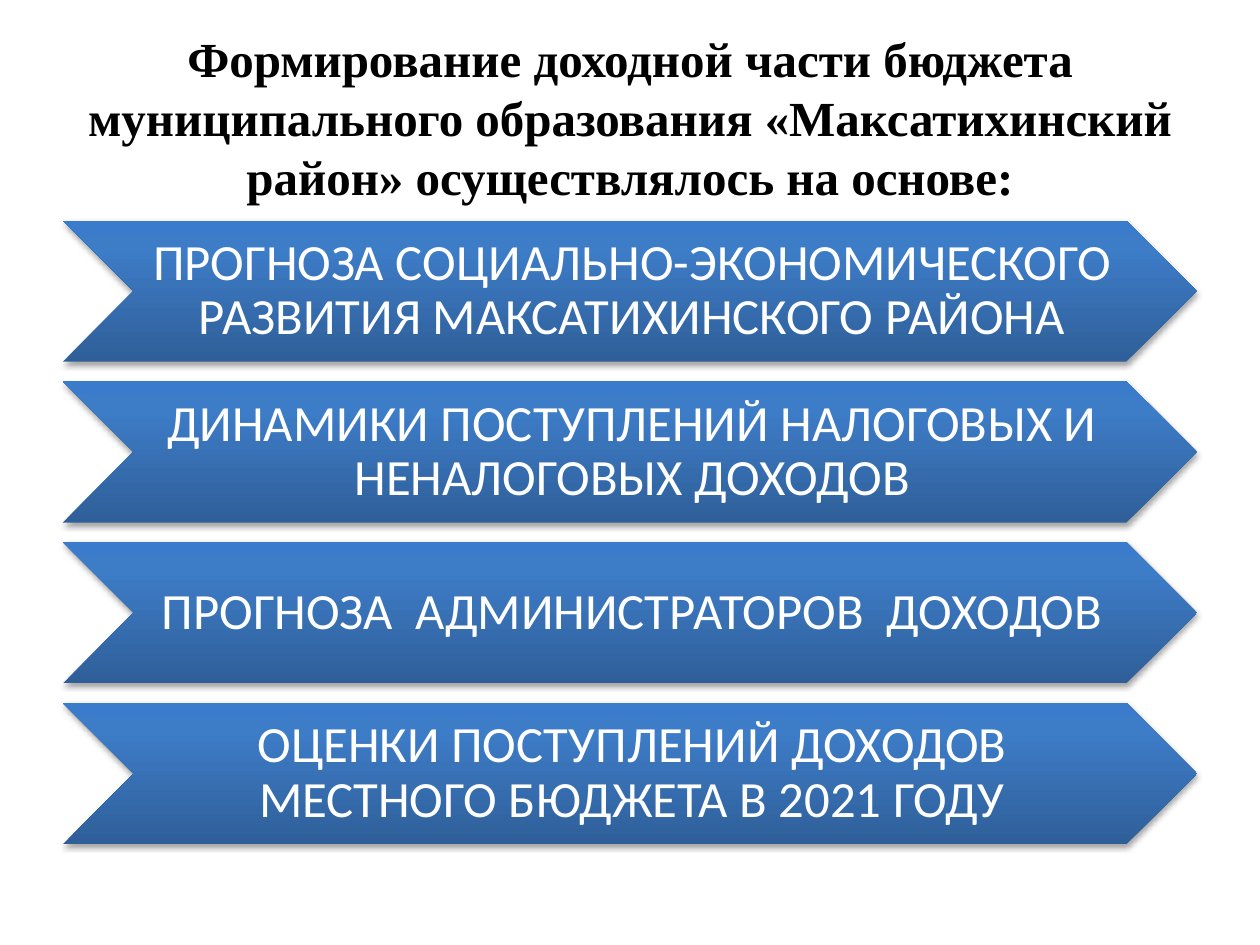
from dataclasses import dataclass

from lxml import etree
from pptx import Presentation
from pptx.dml.color import RGBColor
from pptx.enum.shapes import MSO_SHAPE
from pptx.enum.text import MSO_ANCHOR, PP_ALIGN
from pptx.oxml.ns import qn
from pptx.slide import Slide
from pptx.util import Inches, Pt

CHEVRON = MSO_SHAPE.CHEVRON
MIDDLE = MSO_ANCHOR.MIDDLE
CENTER = PP_ALIGN.CENTER

HEADING = (
    "Формирование доходной части бюджета муниципального образования "
    "«Максатихинский район» осуществлялось на основе:"
)
FOUNDATIONS = [
    "ПРОГНОЗА СОЦИАЛЬНО-ЭКОНОМИЧЕСКОГО РАЗВИТИЯ МАКСАТИХИНСКОГО РАЙОНА",
    "ДИНАМИКИ ПОСТУПЛЕНИЙ НАЛОГОВЫХ И НЕНАЛОГОВЫХ ДОХОДОВ",
    "ПРОГНОЗА  АДМИНИСТРАТОРОВ  ДОХОДОВ",
    "ОЦЕНКИ ПОСТУПЛЕНИЙ ДОХОДОВ МЕСТНОГО БЮДЖЕТА В 2021 ГОДУ",
]
LEFT, WIDTH = 0.5, 9
FIRST_TOP, LAST_TOP, BAND_HEIGHT = 1.75, 5.58, 1.12
NOTCH = BAND_HEIGHT / 2


def color(hex_code):
    return RGBColor.from_string(hex_code)


def write(frame, text, font, size, ink, bold=False, spacing=1.0):
    paragraph = frame.paragraphs[0]
    paragraph.alignment = CENTER
    paragraph.line_spacing = spacing
    run = paragraph.add_run()
    run.text = text
    run.font.name = font
    run.font.size = Pt(size)
    run.font.bold = bold
    run.font.color.rgb = color(ink)


def add_color(parent, hex_code):
    return etree.SubElement(parent, qn("a:srgbClr"), val=hex_code)


@dataclass
class BudgetSlide:
    slide: Slide
    heading_font: str = "Times New Roman"
    body_font: str = "Calibri"
    heading_ink: str = "000000"
    body_ink: str = "FFFFFF"
    shadow_ink: str = "000000"
    gradient: tuple = ((0, "2F5F99"), (80, "3D7CC7"), (100, "3A7CCB"))

    def text_frame(self, left, top, width, height):
        label = self.slide.shapes.add_textbox(
            Inches(left), Inches(top), Inches(width), Inches(height)
        )
        frame = label.text_frame
        frame.word_wrap = True
        frame.vertical_anchor = MIDDLE
        return frame

    def heading(self, text):
        frame = self.text_frame(LEFT, 0.3, WIDTH, 1.25)
        write(frame, text, self.heading_font, 28, self.heading_ink, bold=True)

    def chevron(self, top):
        band = self.slide.shapes.add_shape(
            CHEVRON, Inches(LEFT), Inches(top), Inches(WIDTH), Inches(BAND_HEIGHT)
        )
        band.line.fill.background()
        band.shadow.inherit = False
        properties = band.element.spPr
        self.shade(properties)
        self.cast_shadow(properties)

    def shade(self, properties):
        shading = etree.Element(qn("a:gradFill"), rotWithShape="1")
        stops = etree.SubElement(shading, qn("a:gsLst"))
        for percent, hex_code in self.gradient:
            stop = etree.SubElement(stops, qn("a:gs"), pos=str(percent * 1000))
            add_color(stop, hex_code)
        etree.SubElement(shading, qn("a:lin"), ang=str(270 * 60000), scaled="0")
        properties.find(qn("a:prstGeom")).addnext(shading)

    def cast_shadow(self, properties):
        shadow = etree.SubElement(
            properties.find(qn("a:effectLst")),
            qn("a:outerShdw"),
            blurRad=str(Pt(3.1)),
            dist=str(Pt(1.8)),
            dir=str(90 * 60000),
            rotWithShape="0",
        )
        tint = add_color(shadow, self.shadow_ink)
        etree.SubElement(tint, qn("a:alpha"), val="35000")

    def foundation(self, text, top):
        self.chevron(top)
        frame = self.text_frame(LEFT + NOTCH, top, WIDTH - 2 * NOTCH, BAND_HEIGHT)
        frame.margin_left = Inches(0.04)
        frame.margin_right = 0
        frame.margin_top = frame.margin_bottom = Inches(0.02)
        write(frame, text, self.body_font, 29, self.body_ink, spacing=0.9)


def main():
    deck = Presentation()
    deck.slide_width = Inches(10)
    deck.slide_height = Inches(7.5)
    budget = BudgetSlide(deck.slides.add_slide(deck.slide_layouts[6]))
    budget.heading(HEADING)
    pitch = (LAST_TOP - FIRST_TOP) / (len(FOUNDATIONS) - 1)
    for index, text in enumerate(FOUNDATIONS):
        budget.foundation(text, FIRST_TOP + index * pitch)
    deck.save("out.pptx")


if __name__ == "__main__":
    main()
